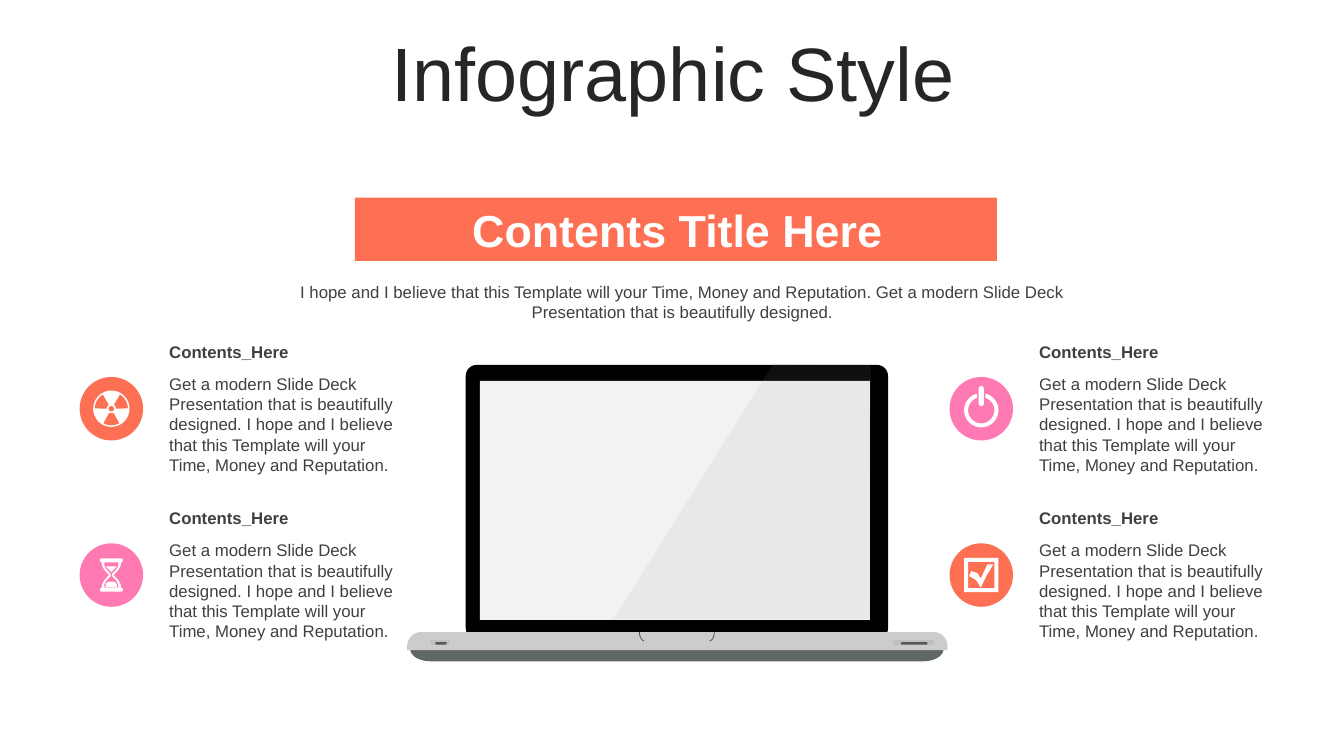
from math import cos, radians, sin

from lxml.etree import SubElement
from pptx import Presentation
from pptx.dml.color import RGBColor
from pptx.enum.shapes import MSO_SHAPE as SHAPE
from pptx.enum.text import MSO_ANCHOR as ANCHOR, PP_ALIGN as ALIGN
from pptx.oxml.ns import qn
from pptx.util import Inches, Pt

ORANGE = RGBColor(0xFE, 0x70, 0x54)
PINK = RGBColor(0xFF, 0x79, 0xB2)
WHITE = RGBColor(0xFF, 0xFF, 0xFF)
BLACK = RGBColor(0x00, 0x00, 0x00)
TITLE_INK = RGBColor(0x26, 0x26, 0x26)
INK = RGBColor(0x40, 0x40, 0x40)
SCREEN = RGBColor(0xF2, 0xF2, 0xF2)
GLARE = RGBColor(0x99, 0x99, 0x99)
DECK = RGBColor(0xCC, 0xCC, 0xCC)
UNDERSIDE = RGBColor(0x5F, 0x67, 0x67)
NOTCH = RGBColor(0x4D, 0x4D, 0x4D)
PORT = RGBColor(0xBF, 0xBF, 0xBF)
SLOT = RGBColor(0x59, 0x59, 0x59)

# All lengths are cells of a square grid: 133.33 columns by 75 rows
CELL = Inches(0.1)
COLS, ROWS = 133.33, 75
ITEM_X, ITEM_Y = 7.9, 33.4
PITCH_X, PITCH_Y = 86.3, 16.5
DISC = 6.3

HEADING = "Contents_Here"
BODY = ("Get a modern Slide Deck Presentation that is beautifully designed. "
        "I hope and I believe that this Template will your Time, Money and Reputation.")
SUBTITLE = ("I hope and I believe that this Template will your Time, Money and Reputation. "
            "Get a modern Slide Deck Presentation that is beautifully designed.")


def cells(*values):
    return [round(v * CELL) for v in values]


def paint(s, color):
    s.shadow.inherit = False
    s.fill.solid()
    s.fill.fore_color.rgb = color
    s.line.fill.background()
    return s


def add_block(shapes, kind, box, color, corner=None):
    s = paint(shapes.add_shape(kind, *cells(*box)), color)
    if corner is not None:
        s.adjustments[0] = corner
    return s


def add_outline(shapes, contours, color, cx=0, cy=0):
    """Fill closed contours given relative to (cx, cy); inner ones cut holes."""
    placed = [[cells(cx + x, cy + y) for x, y in c] for c in contours]
    fb = shapes.build_freeform(*placed[0][0])
    for i, (first, *rest) in enumerate(placed):
        if i:
            fb.move_to(*first)
        fb.add_line_segments(rest, close=True)
    return paint(fb.convert_to_shape(), color)


def add_text(shapes, box, text, size=12, color=INK, bold=False, align=ALIGN.LEFT,
             anchor=ANCHOR.TOP, inset=1, **spacing):
    tf = shapes.add_textbox(*cells(*box)).text_frame
    frame = {"word_wrap": True, "vertical_anchor": anchor,
             "margin_left": round(inset * CELL), "margin_right": round(inset * CELL)}
    for name, value in frame.items():
        setattr(tf, name, value)
    p = tf.paragraphs[0]
    for name, value in {"alignment": align, **spacing}.items():
        setattr(p, name, value)
    r = p.add_run()
    r.text = text
    for name, value in {"name": "Arial", "size": Pt(size), "bold": bold}.items():
        setattr(r.font, name, value)
    r.font.color.rgb = color


def arc(cx, cy, rx, ry, start, end, steps=16):
    angles = [radians(start + (end - start) * i / steps) for i in range(steps + 1)]
    return [(cx + rx * cos(a), cy + ry * sin(a)) for a in angles]


def rect(x0, y0, x1, y1):
    return [(x0, y0), (x1, y0), (x1, y1), (x0, y1)]


def mirrored(quarter):
    """Complete a top-right profile, running from top to waist, on both axes."""
    right = quarter + [(x, -y) for x, y in reversed(quarter)]
    return right + [(-x, y) for x, y in reversed(right)]


# Icons, as contours around the middle of a disc
def radiation():
    blades = [arc(0, 0, 1.65, 1.65, a - 29, a + 29) + arc(0, 0, 0.45, 0.45, a + 29, a - 29)
              for a in (-150, -30, 90)]
    return [arc(0, 0, 1.8, 1.8, 0, 360, 48), arc(0, 0, 0.28, 0.28, 0, 360)] + blades


def hourglass():
    glass = [(1, -1.65), (1.15, -1.55), (1.15, -1.4), (1, -1.25), (0.95, -1.25),
             (0.92, -0.9), (0.65, -0.45), (0.22, 0)]
    hollow = [(0.7, -1.25), (0.68, -0.9), (0.5, -0.55), (0.06, -0.1)]
    top_sand = [(-0.55, -0.85), (0.55, -0.85), (0, -0.3)]
    low_sand = [(-0.58, 1.2), (-0.5, 0.8), (-0.25, 0.66), (0.25, 0.66), (0.5, 0.8), (0.58, 1.2)]
    return [mirrored(glass), mirrored(hollow), top_sand, low_sand]


def power():
    ring = arc(0, 0.15, 1.7, 1.7, -76, 256, 48) + arc(0, 0.15, 1.3, 1.3, 252, -72, 48)
    bar = arc(0, -2, 0.25, 0.25, 180, 360) + arc(0, -0.5, 0.25, 0.25, 0, 180)
    return [ring, bar]


def checkbox():
    tick = [(-1.2, 0.1), (-1, -0.4), (-0.4, -0.2), (-0.05, 0.35), (0.6, -1.05),
            (1.2, -1.05), (0.5, 0.1), (-0.05, 1.25), (-0.5, 0.5)]
    return [rect(-1.7, -1.7, 1.7, 1.7), rect(-1.3, -1.3, 1.3, 1.3), tick]


def add_laptop(shapes):
    # Underside, lid and screen
    add_outline(shapes, [[(40.7, 64.4), (93.6, 64.4)] + arc(91.6, 64.4, 2, 1.2, 0, 90)
                         + arc(42.7, 64.4, 2, 1.2, 90, 180)], UNDERSIDE)
    add_block(shapes, SHAPE.ROUNDED_RECTANGLE, (46.2, 36.2, 41.9, 27.2), BLACK, 0.04)
    add_block(shapes, SHAPE.RECTANGLE, (47.6, 37.8, 38.7, 23.7), SCREEN)
    # Deck with its opening notch
    add_outline(shapes, [arc(41.8, 64.1, 1.4, 1.4, 180, 270) + arc(92.6, 64.1, 1.4, 1.4, 270, 360)
                         + [(94, 64.5), (40.4, 64.5)]], DECK)
    notch = [arc(cx, 62.7, 0.5, 0.9, start, end) + arc(cx, 62.7, 0.42, 0.82, end, start)
             for cx, start, end in ((63.9, 180, 90), (70.4, 0, 90))]
    add_outline(shapes, notch, NOTCH)
    # Ports
    for x, width, inset, slot in ((42.7, 1.9, 0.5, 1.1), (88.6, 4.1, 0.8, 2.6)):
        add_block(shapes, SHAPE.ROUNDED_RECTANGLE, (x, 63.5, width, 0.5), PORT, 0.28)
        add_block(shapes, SHAPE.ROUNDED_RECTANGLE, (x + inset, 63.7, slot, 0.25), SLOT, 0.28)
    # Glare across the lid
    s = add_outline(shapes, [[(76.7, 36.1), (86.4, 36.2), (86.3, 61.4), (60.9, 61.4)]], GLARE)
    SubElement(s._element.spPr.find(".//" + qn("a:srgbClr")), qn("a:alpha"), val="10000")


def add_item(shapes, col, row, color, icon):
    x, y = ITEM_X + col * PITCH_X, ITEM_Y + row * PITCH_Y
    add_block(shapes, SHAPE.OVAL, (x, y + 4, DISC, DISC), color)
    add_outline(shapes, icon(), WHITE, x + DISC / 2, y + 4 + DISC / 2)
    caption = shapes.add_group_shape().shapes
    add_text(caption, (x + 7.9, y + 3.2, 25.2, 11.1), BODY)
    add_text(caption, (x + 7.9, y, 25.2, 3), HEADING, bold=True)


def main():
    prs = Presentation()
    prs.slide_width, prs.slide_height = cells(COLS, ROWS)
    shapes = prs.slides.add_slide(prs.slide_layouts[6]).shapes
    centred = {"align": ALIGN.CENTER, "anchor": ANCHOR.MIDDLE}

    add_laptop(shapes.add_group_shape().shapes)

    # Title, banner and subtitle
    add_text(shapes, (3.5, 3.7, 126.6, 7.9), "Infographic Style", 54, TITLE_INK,
             line_spacing=0.9, space_before=Pt(10), **centred)
    add_block(shapes, SHAPE.RECTANGLE, (35.2, 19.6, 63.7, 6.3), ORANGE)
    add_text(shapes, (43.3, 19.6, 47.8, 6.3), "Contents Title Here", 32, WHITE, True, **centred)
    add_text(shapes, (23.6, 26.8, 88.2, 6.3), SUBTITLE, inset=3, **centred)

    # Four items, two on each side of the laptop
    for col, row, color, icon in ((0, 0, ORANGE, radiation), (0, 1, PINK, hourglass),
                                  (1, 0, PINK, power), (1, 1, ORANGE, checkbox)):
        add_item(shapes, col, row, color, icon)

    prs.save("out.pptx")


if __name__ == "__main__":
    main()
